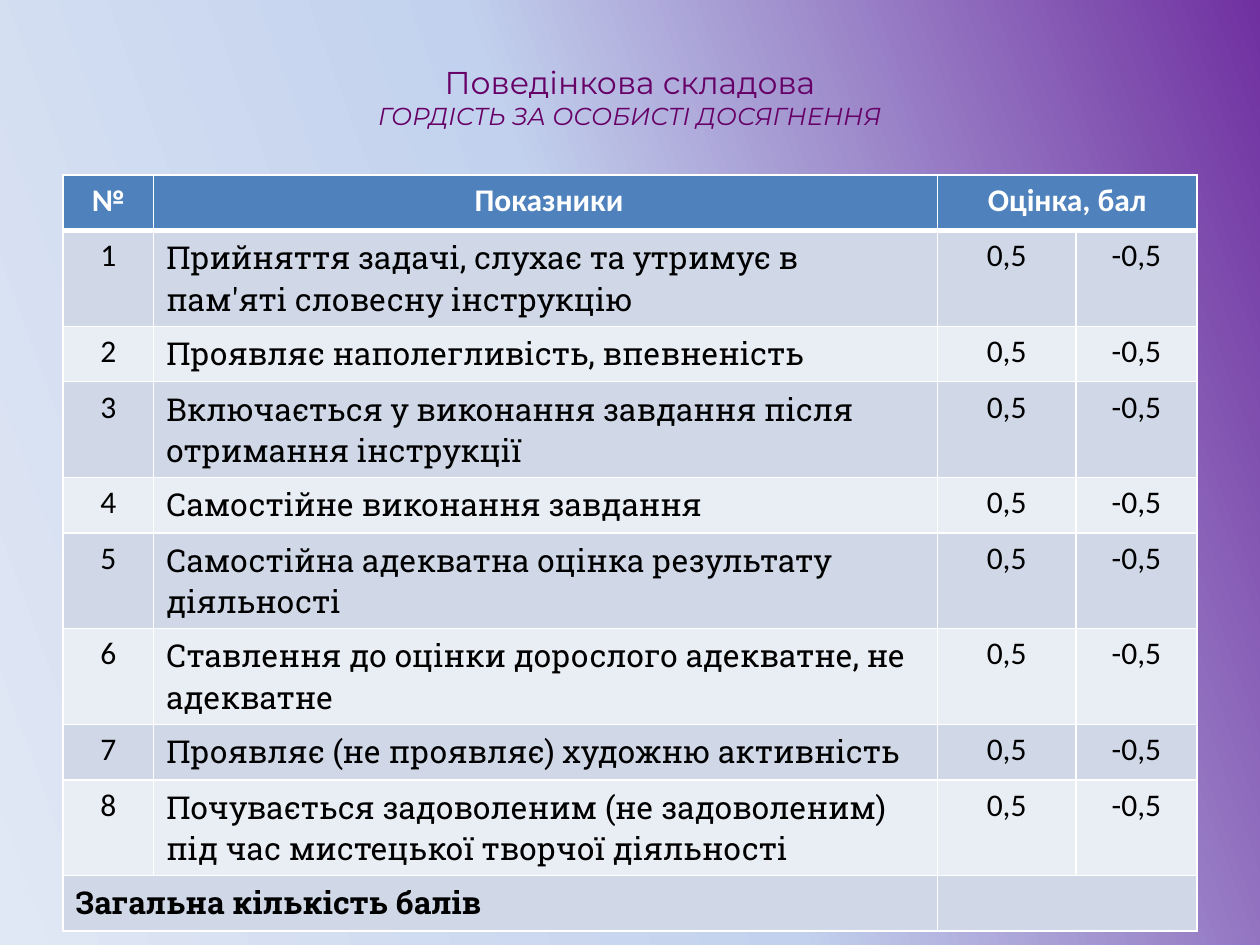
from dataclasses import dataclass

from lxml import etree
from pptx import Presentation
from pptx import util as u
from pptx.dml.color import RGBColor
from pptx.enum import text
from pptx.oxml.ns import qn


@dataclass(frozen=True)
class Theme:
    gradient: tuple = ((0, "7030A0"), (50, "C2D1ED"), (100, "E1E8F5"))
    angle: int = 160
    title: str = "660066"
    header: str = "4F81BD"
    bands: tuple = ("D0D8E8", "E9EDF4")
    white: str = "FFFFFF"
    black: str = "000000"
    title_font: str = "Montserrat"
    body_font: str = "Calibri"
    text_font: str = "Roboto Slab"
    size: int = 18
    subtitle_size: int = 14
    line: int = 1
    header_line: int = 3


T = Theme()
W, H = 10, 7.5
MARGIN = 0.05 * W
COLS = (0.72, 6.22, 1.1, 0.96)
ONE_LINE, TWO_LINES = 0.44, 0.76
INDICATORS = (
    ("Прийняття задачі, слухає та утримує в пам'яті словесну інструкцію", TWO_LINES),
    ("Проявляє наполегливість, впевненість", ONE_LINE),
    ("Включається у виконання завдання після отримання інструкції", TWO_LINES),
    ("Самостійне виконання завдання", ONE_LINE),
    ("Самостійна адекватна оцінка результату діяльності", TWO_LINES),
    ("Ставлення до оцінки дорослого адекватне, не адекватне", TWO_LINES),
    ("Проявляє (не проявляє) художню активність", ONE_LINE),
    ("Почувається задоволеним (не задоволеним) під час мистецької творчої діяльності", TWO_LINES),
)


def solid(parent, color):
    fill = etree.SubElement(parent, qn("a:solidFill"))
    etree.SubElement(fill, qn("a:srgbClr"), val=color)


def paint_background(s):
    fill = s.background.fill
    fill.gradient()
    fill.gradient_angle = 360 - T.angle
    stops = s._element.find(".//" + qn("a:gsLst"))
    for old in list(stops):
        stops.remove(old)
    for pos, color in T.gradient:
        gs = etree.SubElement(stops, qn("a:gs"), pos=str(pos * 1000))
        etree.SubElement(gs, qn("a:srgbClr"), val=color)


def add_title(s, title, subtitle):
    sp = s.shapes.add_textbox(u.Inches(MARGIN), u.Inches(0.04 * H),
                              u.Inches(W - 2 * MARGIN), u.Inches(0.93))
    tf = sp.text_frame
    tf.word_wrap = True
    tf.vertical_anchor = text.MSO_ANCHOR.MIDDLE
    p = tf.paragraphs[0]
    p.alignment = text.PP_ALIGN.CENTER
    p.font.name = T.title_font
    p.font.color.rgb = RGBColor.from_string(T.title)
    r = p.add_run()
    r.text = title
    r.font.size = u.Pt(T.size)
    p.add_line_break()
    r = p.add_run()
    r.text = subtitle
    r.font.size = u.Pt(T.subtitle_size)
    r.font.italic = True


def set_borders(cell, top, bottom):
    tc_pr = cell._tc.get_or_add_tcPr()
    for side, width in (("L", T.line), ("R", T.line), ("T", top), ("B", bottom)):
        ln = etree.SubElement(tc_pr, qn("a:ln" + side), w=str(u.Pt(width)))
        solid(ln, T.white)


def write(cell, words, font=T.body_font, color=T.black, bold=False, centred=True):
    p = cell.text_frame.paragraphs[0]
    p.text = words
    p.alignment = text.PP_ALIGN.CENTER if centred else text.PP_ALIGN.LEFT
    p.font.name = font
    p.font.size = u.Pt(T.size)
    p.font.bold = bold
    p.font.color.rgb = RGBColor.from_string(color)


def add_grid(s, heights):
    frame = s.shapes.add_table(len(heights), len(COLS), u.Inches(MARGIN), u.Inches(1.39),
                               u.Inches(sum(COLS)), u.Inches(sum(heights)))
    table = frame.table
    for column, width in zip(table.columns, COLS):
        column.width = u.Inches(width)
    for i, height in enumerate(heights):
        table.rows[i].height = u.Inches(height)
        fill = T.bands[(i - 1) % 2] if i else T.header
        for cell in table.rows[i].cells:
            set_borders(cell, T.header_line if i == 1 else T.line,
                        T.header_line if i == 0 else T.line)
            cell.fill.solid()
            cell.fill.fore_color.rgb = RGBColor.from_string(fill)
    return table


def add_scores(s):
    heights = [ONE_LINE] + [height for _, height in INDICATORS] + [ONE_LINE]
    table = add_grid(s, heights)
    last = len(heights) - 1
    for row, col in ((0, 2), (last, 0), (last, 2)):
        table.cell(row, col).merge(table.cell(row, col + 1))
    for col, words in enumerate(("№", " Показники", "Оцінка, бал")):
        write(table.cell(0, col), words, color=T.white, bold=True)
    for i, (indicator, _) in enumerate(INDICATORS, 1):
        write(table.cell(i, 0), str(i))
        write(table.cell(i, 1), indicator, font=T.text_font, centred=False)
        write(table.cell(i, 2), "0,5")
        write(table.cell(i, 3), "-0,5")
    write(table.cell(last, 0), "Загальна кількість балів",
          font=T.text_font, bold=True, centred=False)


def main():
    prs = Presentation()
    prs.slide_width, prs.slide_height = u.Inches(W), u.Inches(H)
    s = prs.slides.add_slide(prs.slide_layouts[6])
    paint_background(s)
    add_title(s, "Поведінкова складова", "ГОРДІСТЬ ЗА ОСОБИСТІ ДОСЯГНЕННЯ")
    add_scores(s)
    prs.save("out.pptx")


if __name__ == "__main__":
    main()
